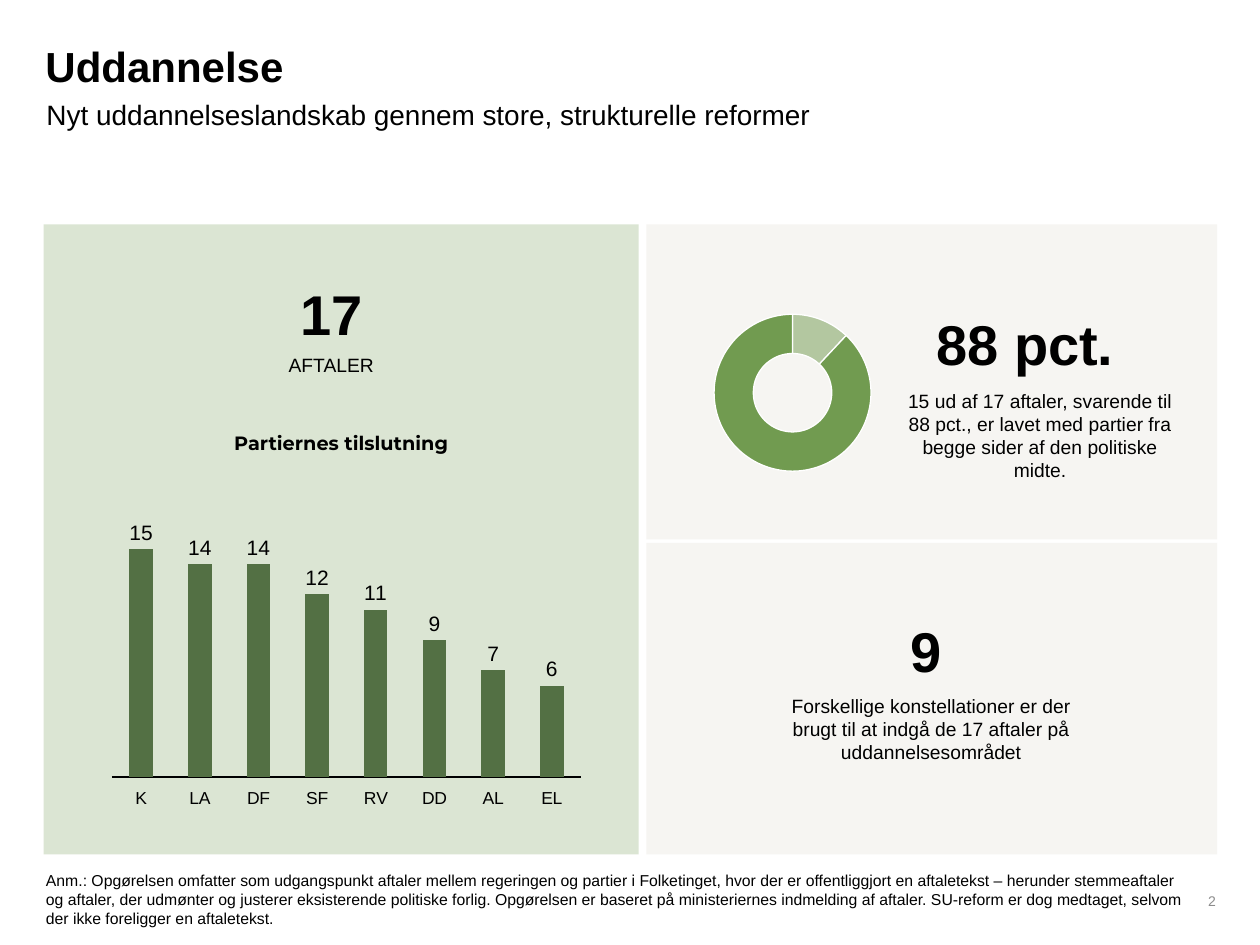
from pptx import Presentation
from pptx.chart.data import CategoryChartData
from pptx.dml.color import RGBColor
from pptx.enum.chart import XL_CHART_TYPE, XL_LABEL_POSITION, XL_TICK_LABEL_POSITION, XL_TICK_MARK
from pptx.enum.shapes import MSO_SHAPE
from pptx.enum.text import MSO_ANCHOR, MSO_AUTO_SIZE, PP_ALIGN
from pptx.oxml import parse_xml
from pptx.oxml.ns import nsdecls, qn
from pptx.util import Pt

COLORS = {
    "black": "000000",
    "white": "FFFFFF",
    "grey": "8C8C8C",
    "panel": "F6F5F2",
    "green": "719B50",
    "dark green": "537044",
}
CENTER = {"alignment": PP_ALIGN.CENTER}
BIG = {"size": 32, "bold": True}
SMALL = {"size": 11}


def points(box):
    return [Pt(value) for value in box]


class SlideBuilder:
    def __init__(self, slide, font_name="Arial"):
        self.slide = slide
        self.font_name = font_name

    def color(self, name):
        return RGBColor.from_string(COLORS[name])

    def style_font(self, font, size, bold=False, color="black", name=None):
        values = {"name": name or self.font_name, "size": Pt(size), "bold": bold}
        for attribute, value in values.items():
            setattr(font, attribute, value)
        font.color.rgb = self.color(color)

    def fill(self, fill, color, opacity=100):
        fill.solid()
        fill.fore_color.rgb = self.color(color)
        if opacity < 100:
            color_element = fill._xPr.find(".//" + qn("a:srgbClr"))
            color_element.append(parse_xml(f'<a:alpha {nsdecls("a")} val="{opacity * 1000}"/>'))

    def panel(self, box, color, opacity=100):
        shape = self.slide.shapes.add_shape(MSO_SHAPE.RECTANGLE, *points(box))
        shape.shadow.inherit = False
        shape.line.fill.background()
        self.fill(shape.fill, color, opacity)

    def set_text(self, shape, paragraphs, margins=(0, 0), anchor=MSO_ANCHOR.TOP, **paragraph_format):
        """Fill a shape with paragraphs, each a list of (text, font values) runs."""
        frame = shape.text_frame
        horizontal, vertical = points(margins)
        frame_format = {
            "margin_left": horizontal, "margin_right": horizontal,
            "margin_top": vertical, "margin_bottom": vertical,
            "word_wrap": True, "vertical_anchor": anchor, "auto_size": MSO_AUTO_SIZE.NONE,
        }
        for attribute, value in frame_format.items():
            setattr(frame, attribute, value)
        for index, runs in enumerate(paragraphs):
            paragraph = frame.add_paragraph() if index else frame.paragraphs[0]
            for attribute, value in paragraph_format.items():
                setattr(paragraph, attribute, value)
            for text, font_values in runs:
                run = paragraph.add_run()
                run.text = text
                self.style_font(run.font, **font_values)

    def title(self, box, text, **font_values):
        shape = self.slide.shapes.title
        for attribute, value in zip(("left", "top", "width", "height"), points(box)):
            setattr(shape, attribute, value)
        self.set_text(shape, [[(text, font_values)]], alignment=PP_ALIGN.LEFT, line_spacing=0.9)

    def text(self, box, paragraphs, **text_format):
        self.set_text(self.slide.shapes.add_textbox(*points(box)), paragraphs, **text_format)

    def chart(self, box, kind, categories, values, plot_area):
        """Add a one-series chart whose inner plot takes the given fractions of the box."""
        data = CategoryChartData()
        data.categories = categories
        data.add_series("Series 1", values)
        chart = self.slide.shapes.add_chart(kind, *points(box), data).chart
        chart.has_title = chart.has_legend = False
        self.style_font(chart.font, 10)
        plot_element = chart.element.find(".//" + qn("c:plotArea"))
        for layout in plot_element.findall(qn("c:layout")):
            plot_element.remove(layout)
        sizes = "".join(f'<c:{key} val="{value}"/>' for key, value in zip("xywh", plot_area))
        plot_element.insert(0, parse_xml(
            f'<c:layout {nsdecls("c")}><c:manualLayout><c:layoutTarget val="inner"/>'
            f'<c:xMode val="edge"/><c:yMode val="edge"/>{sizes}</c:manualLayout></c:layout>'))
        return chart

    def column_chart(self, box, categories, values, maximum):
        chart = self.chart(box, XL_CHART_TYPE.COLUMN_CLUSTERED, categories, values,
                           (0.02, 0.02, 0.96, 0.88))
        plot = chart.plots[0]
        plot.vary_by_categories = False
        plot.gap_width = 150
        self.fill(plot.series[0].format.fill, "dark green")
        labels = plot.series[0].data_labels
        labels.show_value = True
        labels.position = XL_LABEL_POSITION.OUTSIDE_END
        self.style_font(labels.font, 12)
        axis = chart.category_axis
        axis.major_tick_mark = XL_TICK_MARK.NONE
        axis.tick_label_position = XL_TICK_LABEL_POSITION.LOW
        axis.format.line.color.rgb = self.color("black")
        axis.format.line.width = Pt(0.75)
        self.style_font(axis.tick_labels.font, 10)
        axis_format = {"visible": False, "has_major_gridlines": False,
                       "minimum_scale": 0, "maximum_scale": maximum, "major_unit": 1}
        for attribute, value in axis_format.items():
            setattr(chart.value_axis, attribute, value)

    def doughnut_chart(self, box, values, opacities):
        categories = [str(number) for number in range(1, len(values) + 1)]
        chart = self.chart(box, XL_CHART_TYPE.DOUGHNUT, categories, values,
                           (0.09, 0.11, 0.82, 0.79))
        chart.element.find(".//" + qn("c:holeSize")).set("val", "60")
        for index, opacity in enumerate(opacities):
            slice_format = chart.plots[0].series[0].points[index].format
            self.fill(slice_format.fill, "green", opacity)
            slice_format.line.color.rgb = self.color("white")
            slice_format.line.width = Pt(0.75)


def main():
    presentation = Presentation()
    presentation.slide_width, presentation.slide_height = Pt(720), Pt(540)
    builder = SlideBuilder(presentation.slides.add_slide(presentation.slide_layouts[5]))

    builder.title((26, 26.6, 306, 28), "Uddannelse", size=24, bold=True)
    builder.text((26.6, 55.4, 566.6, 22.3),
                 [[("Nyt uddannelseslandskab gennem store, strukturelle reformer", {"size": 16})]],
                 anchor=MSO_ANCHOR.MIDDLE, line_spacing=0.9)

    builder.panel((25, 128.2, 340, 360), "green", 25)
    for top, height in ((128.2, 180), (310.3, 177.9)):
        builder.panel((369.4, top, 326.2, height), "panel")

    builder.text((146.2, 159.8, 86.4, 39), [[("17", BIG)]], **CENTER)
    builder.text((136, 201.6, 106.6, 13.7), [[("AFTALER", SMALL)]], **CENTER)
    builder.text((90.7, 246.2, 208.8, 13.7),
                 [[("Partiernes tilslutning", {"size": 11, "bold": True, "name": "Montserrat"})]],
                 anchor=MSO_ANCHOR.BOTTOM, **CENTER)
    builder.column_chart((58.3, 293, 279.4, 169.2),
                         ["K", "LA", "DF", "SF", "RV", "DD", "AL", "EL"],
                         [15, 14, 14, 12, 11, 9, 7, 6], maximum=17)

    builder.doughnut_chart((398.2, 167, 109.4, 113.8), [12, 88], [50, 100])
    builder.text((506.9, 169.9, 157.7, 76.3), [[("88 pct.", BIG)]], margins=(7.2, 7.2), **CENTER)
    builder.text((514.8, 222.5, 159.1, 67),
                 [[("15 ud af 17 aftaler, svarende til 88 pct., er lavet med partier fra "
                    "begge sider af den politiske midte.", SMALL)]], **CENTER)

    builder.text((434.2, 344.9, 195.8, 91.4),
                 [[("9", BIG), (" ", {"size": 20})],
                  [("Forskellige konstellationer er der brugt til at indgå de 17 aftaler på "
                    "uddannelsesområdet", SMALL)]],
                 margins=(7.2, 7.2), space_after=Pt(6), **CENTER)

    builder.text((532.8, 500.4, 162, 28.8), [[("2", {"size": 8, "color": "grey"})]],
                 anchor=MSO_ANCHOR.MIDDLE, alignment=PP_ALIGN.RIGHT)
    builder.text((19.2, 493.9, 666, 40.3),
                 [[("Anm.: Opgørelsen omfatter som udgangspunkt aftaler mellem regeringen og partier "
                    "i Folketinget, hvor der er offentliggjort en aftaletekst – herunder "
                    "stemmeaftaler og aftaler, der udmønter og justerer eksisterende politiske "
                    "forlig. Opgørelsen er baseret på ministeriernes indmelding af aftaler. "
                    "SU-reform er dog medtaget, selvom der ikke foreligger en aftaletekst.",
                    {"size": 9})]], margins=(7.2, 3.6))
    presentation.save("out.pptx")


if __name__ == "__main__":
    main()
